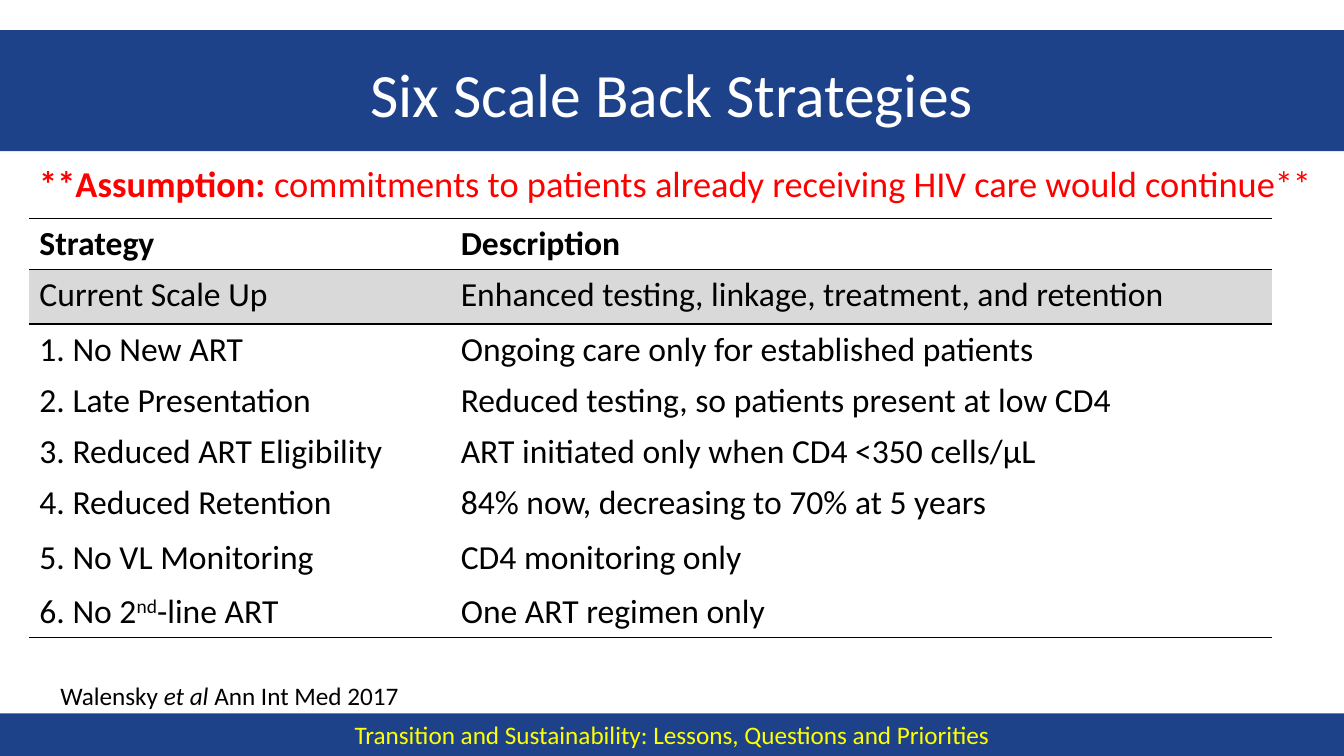
import pptx
import pptx.dml.color
import pptx.enum.shapes
import pptx.enum.text
import pptx.oxml.ns
import pptx.util
from lxml import etree

Cm = pptx.util.Cm
Pt = pptx.util.Pt
RGBColor = pptx.dml.color.RGBColor
Anchor = pptx.enum.text.MSO_ANCHOR
Align = pptx.enum.text.PP_ALIGN

NAVY = RGBColor(0x1E, 0x42, 0x8A)
WHITE = RGBColor(0xFF, 0xFF, 0xFF)
BLACK = RGBColor(0x00, 0x00, 0x00)
RED = RGBColor(0xFF, 0x00, 0x00)
YELLOW = RGBColor(0xFF, 0xFF, 0x00)
GREY = RGBColor(0xD9, 0xD9, 0xD9)

SLIDE_WIDTH, SLIDE_HEIGHT = 33.87, 19.05
COLUMN_WIDTHS = (10.62, 20.7)
ROW_HEIGHT, TALL_ROW_HEIGHT = 1.29, 1.37
TALL_ROWS = (1, 5, 6)
SHADED_ROW = 1
RULES = {0: {"T": 1, "B": 1}, 1: {"T": 1, "B": 1.5}, 2: {"T": 1.5}, 7: {"B": 1}}

SUPERSCRIPT = {"baseline": "30000"}
STRATEGIES = [
    ([("Strategy", {"bold": True})], [("Description", {"bold": True})]),
    ("Current Scale Up", "Enhanced testing, linkage, treatment, and retention"),
    ("1. No New ART", "Ongoing care only for established patients"),
    ("2. Late Presentation", "Reduced testing, so patients present at low CD4"),
    ("3. Reduced ART Eligibility", "ART initiated only when CD4 <350 cells/µL"),
    ("4. Reduced Retention", "84% now, decreasing to 70% at 5 years"),
    ("5. No VL Monitoring", "CD4 monitoring only"),
    ([("6. No 2", {}), ("nd", SUPERSCRIPT), ("-line ART", {})], "One ART regimen only"),
]


class SlideBuilder:
    font_name = "Calibri"

    def __init__(self, slide):
        self.slide = slide

    def fill_text(self, frame, content, size, color, align=Align.LEFT):
        """Fill a text frame from a string or a list of (text, format) runs."""
        paragraph = frame.paragraphs[0]
        paragraph.alignment = align
        runs = [(content, {})] if isinstance(content, str) else content
        for text, formats in runs:
            run = paragraph.add_run()
            run.text = text
            run.font.color.rgb = color
            values = {"name": self.font_name, "size": Pt(size), "bold": False, **formats}
            baseline = values.pop("baseline", None)
            for name, value in values.items():
                setattr(run.font, name, value)
            if baseline:
                run._r.get_or_add_rPr().set("baseline", baseline)

    def band(self, top, height):
        """Draw a full-width navy band."""
        shape = self.slide.shapes.add_shape(
            pptx.enum.shapes.MSO_SHAPE.RECTANGLE, 0, Cm(top), Cm(SLIDE_WIDTH), Cm(height))
        shape.shadow.inherit = False
        shape.fill.solid()
        shape.fill.fore_color.rgb = NAVY
        shape.line.fill.background()
        shape.text_frame.vertical_anchor = Anchor.MIDDLE
        return shape

    def text_box(self, box, content, size, color, align=Align.LEFT, anchor=Anchor.TOP):
        frame = self.slide.shapes.add_textbox(*map(Cm, box)).text_frame
        frame.word_wrap = True
        frame.vertical_anchor = anchor
        self.fill_text(frame, content, size, color, align)

    def cell_borders(self, cell, rules):
        """Rule the sides given with a width in points and clear the others."""
        properties = cell._tc.get_or_add_tcPr()
        for index, side in enumerate("LRTB"):
            line = etree.Element(pptx.oxml.ns.qn(f"a:ln{side}"))
            if side in rules:
                line.set("w", str(Pt(rules[side])))
                fill = etree.SubElement(line, pptx.oxml.ns.qn("a:solidFill"))
                etree.SubElement(fill, pptx.oxml.ns.qn("a:srgbClr"), val=str(BLACK))
            else:
                etree.SubElement(line, pptx.oxml.ns.qn("a:noFill"))
            properties.insert(index, line)

    def table(self, left, top, rows):
        heights = [TALL_ROW_HEIGHT if index in TALL_ROWS else ROW_HEIGHT
                   for index in range(len(rows))]
        table = self.slide.shapes.add_table(
            len(rows), len(COLUMN_WIDTHS), Cm(left), Cm(top),
            Cm(sum(COLUMN_WIDTHS)), Cm(sum(heights))).table
        table.first_row = table.horz_banding = False
        for column, width in zip(table.columns, COLUMN_WIDTHS):
            column.width = Cm(width)
        for index, (row, height, contents) in enumerate(zip(table.rows, heights, rows)):
            row.height = Cm(height)
            for cell, content in zip(row.cells, contents):
                self.fill_text(cell.text_frame, content, 24, BLACK)
                cell.fill.solid()
                cell.fill.fore_color.rgb = GREY if index == SHADED_ROW else WHITE
                self.cell_borders(cell, RULES.get(index, {}))


def main():
    presentation = pptx.Presentation()
    presentation.slide_width = Cm(SLIDE_WIDTH)
    presentation.slide_height = Cm(SLIDE_HEIGHT)
    builder = SlideBuilder(presentation.slides.add_slide(presentation.slide_layouts[6]))

    builder.band(0.76, 3.05)
    footer = builder.band(17.98, 1.07)
    builder.fill_text(footer.text_frame,
                      "Transition and Sustainability: Lessons, Questions and Priorities",
                      18, YELLOW, Align.CENTER)
    builder.text_box((1.7, 0.76, 30.48, 3.18), "Six Scale Back Strategies",
                     44, WHITE, Align.CENTER, Anchor.MIDDLE)
    builder.table(0.74, 5.51, STRATEGIES)
    builder.text_box((1.27, 17.02, 15.67, 1.02),
                     [("Walensky ", {}), ("et al", {"italic": True}),
                      (" Ann Int Med 2017", {})], 18, BLACK)
    builder.text_box((0.74, 3.94, 32.72, 4.24),
                     [("**Assumption: ", {"bold": True}),
                      ("commitments to patients already receiving HIV care would continue**", {})],
                     26, RED)
    presentation.save("out.pptx")


if __name__ == "__main__":
    main()
